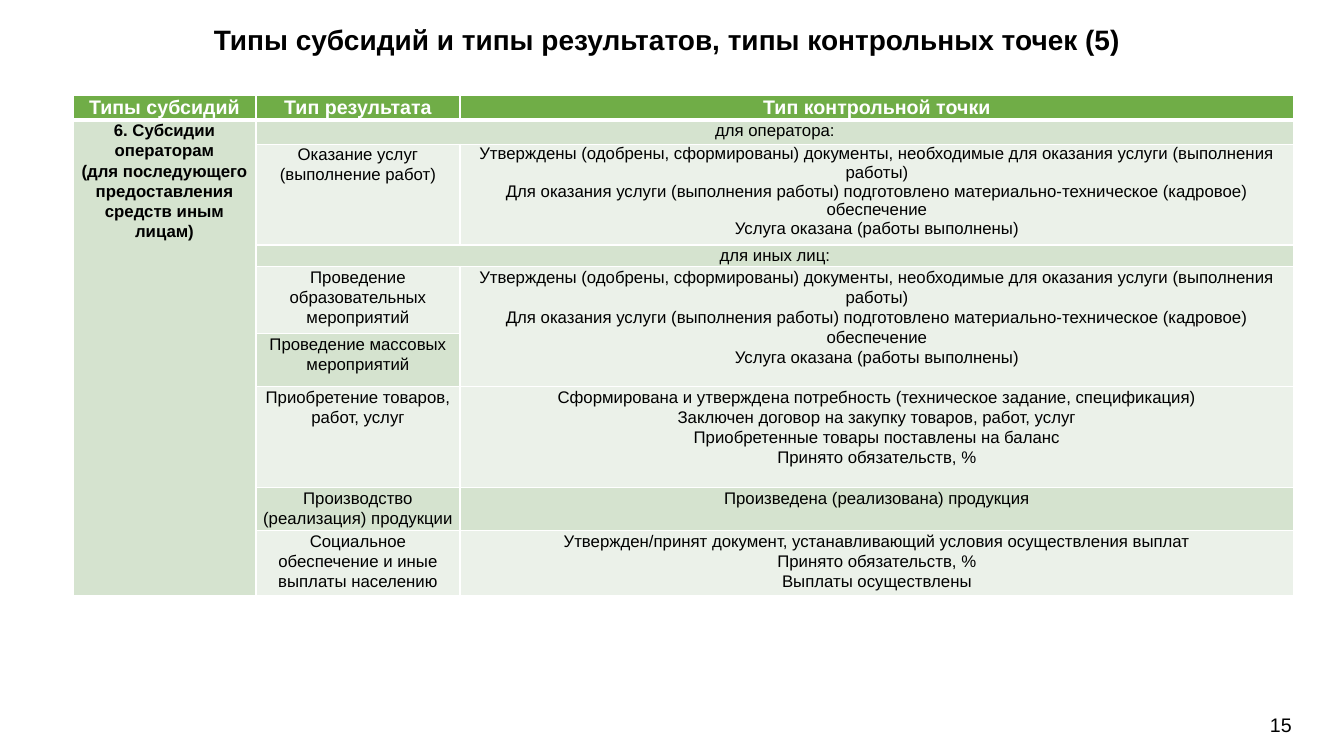
from pptx import Presentation
from pptx.dml.color import RGBColor
from pptx.enum.text import PP_ALIGN as Align
from pptx.util import Pt
from lxml.etree import SubElement as Sub
from pptx.oxml.ns import qn

SCALE = 914400 / 100.8
GREEN, SAGE, PALE = "70AD47", "D5E3CF", "EBF1E9"
BLACK, WHITE = "000000", "FFFFFF"


def px(n):
    """Turn pixels into EMU."""
    return round(n * SCALE)


def style(frame, size, bold, color, align, space=None):
    """Format every paragraph and run of a text frame."""
    for para in frame.paragraphs:
        para.alignment = align
        para.line_spacing = space
        for run in para.runs:
            font = run.font
            font.name, font.size, font.bold = "Arial", Pt(size), bold
            font.color.rgb = RGBColor.from_string(color)


deck = Presentation()
deck.slide_width, deck.slide_height = px(1344), px(756)
slide = deck.slides.add_slide(deck.slide_layouts[6])

# Title and page number
labels = [
    ("Типы субсидий и типы результатов, типы контрольных точек (5)",
     (190, 18, 954, 44), 20, True, Align.CENTER),
    ("15", (1260, 708, 54, 34), 14, False, Align.LEFT),
]
for text, place, size, bold, align in labels:
    frame = slide.shapes.add_textbox(*map(px, place)).text_frame
    frame.word_wrap = True
    frame.text = text
    style(frame, size, bold, BLACK, align)

# Table: text of the three columns and fill of the last two
service = (
    "Утверждены (одобрены, сформированы) документы, необходимые для оказания услуги (выполнения работы)\n"
    "Для оказания услуги (выполнения работы) подготовлено материально-техническое (кадровое) обеспечение\n"
    "Услуга оказана (работы выполнены)"
)
rows = [
    (24, GREEN, "Типы субсидий", "Тип результата", "Тип контрольной точки"),
    (24, SAGE,
     "6. Субсидии операторам\n(для последующего предоставления средств иным лицам)",
     "для оператора:", ""),
    (94, PALE, "", "Оказание услуг (выполнение работ)", service),
    (21, SAGE, "", "для иных лиц:", ""),
    (67, PALE, "", "Проведение образовательных мероприятий", service),
    (53, SAGE, "", "Проведение массовых мероприятий", ""),
    (101, PALE, "", "Приобретение товаров, работ, услуг",
     "Сформирована и утверждена потребность (техническое задание, спецификация)\n"
     "Заключен договор на закупку товаров, работ, услуг\n"
     "Приобретенные товары поставлены на баланс\n"
     "Принято обязательств, %"),
    (40, SAGE, "", "Производство (реализация) продукции",
     "Произведена (реализована) продукция"),
    (60, PALE, "", "Социальное обеспечение и иные выплаты населению",
     "Утвержден/принят документ, устанавливающий условия осуществления выплат\n"
     "Принято обязательств, %\n"
     "Выплаты осуществлены"),
]
widths = [183, 204, 834]
high = sum(row[0] for row in rows)
table = slide.shapes.add_table(
    len(rows), len(widths), px(73), px(95), px(sum(widths)), px(high)).table
for col, width in zip(table.columns, widths):
    col.width = px(width)

for r, (height, fill, *texts) in enumerate(rows):
    table.rows[r].height = px(height)
    for c, text in enumerate(texts):
        cell = table.cell(r, c)
        cell.text = text
        side = 3 if r == 0 else 7 if r > 3 and c == 1 or r > 6 else 4
        cell.margin_left = cell.margin_right = px(side)
        cell.margin_top = cell.margin_bottom = 0
        props = cell._tc.get_or_add_tcPr()
        for edge in "LRTB":
            thick = 3 if (r, edge) in ((0, "B"), (1, "T")) else 1
            line = Sub(props, qn("a:ln" + edge), w=str(Pt(thick)))
            Sub(Sub(line, qn("a:solidFill")), qn("a:srgbClr"), val=WHITE)
        cell.fill.solid()
        shade = SAGE if r and c == 0 else fill
        cell.fill.fore_color.rgb = RGBColor.from_string(shade)
        head = r == 0
        space = 1.0 if (r, c) == (2, 2) else 1.07
        style(cell.text_frame, 14 if head else 12, head or c == 0,
              WHITE if head else BLACK, Align.CENTER, space)

for top, left, bottom, right in [(1, 0, 8, 0), (1, 1, 1, 2), (3, 1, 3, 2), (4, 2, 5, 2)]:
    table.cell(top, left).merge(table.cell(bottom, right))

deck.save("out.pptx")
